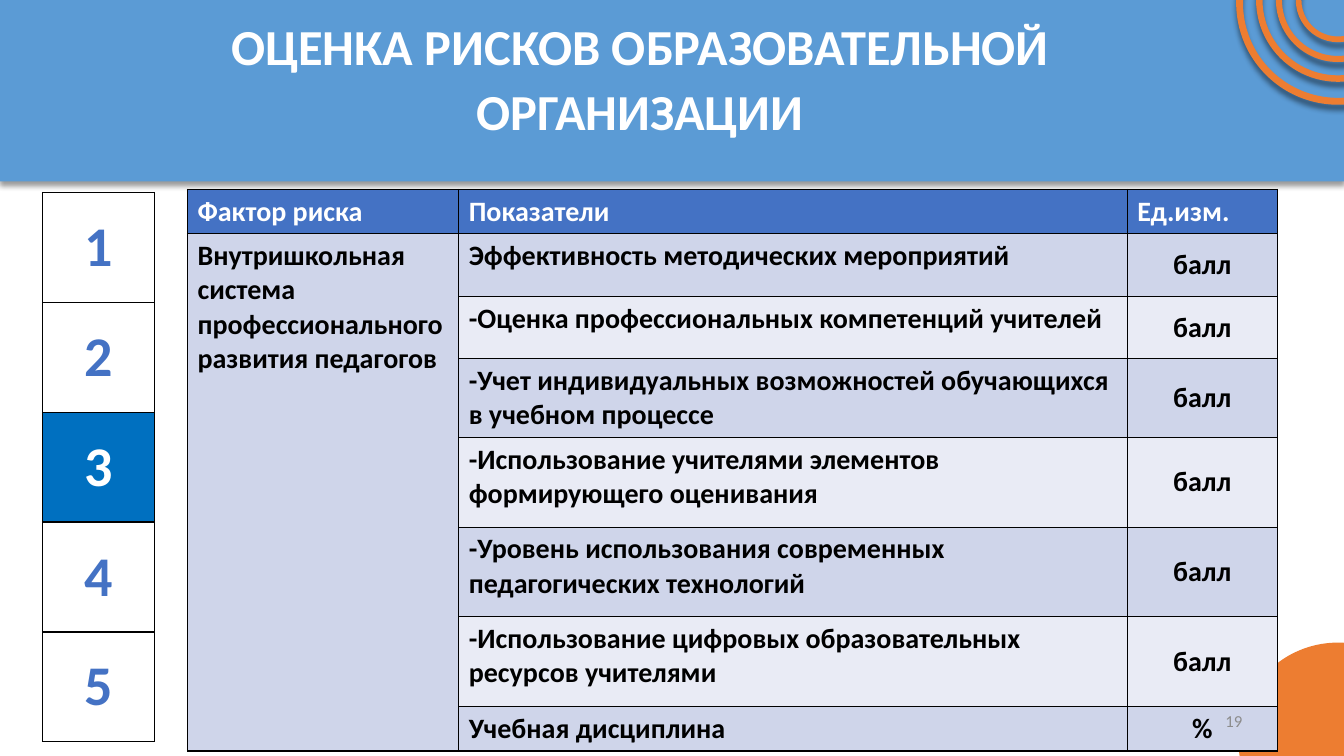
from dataclasses import dataclass

from lxml.etree import SubElement
from pptx import Presentation
from pptx.dml.color import RGBColor
from pptx.enum.shapes import MSO_SHAPE as SHAPE
from pptx.enum.text import MSO_ANCHOR as ANCHOR, MSO_AUTO_SIZE as AUTO, PP_ALIGN as ALIGN
from pptx.oxml import parse_xml
from pptx.oxml.ns import nsdecls, qn
from pptx.util import Inches, Pt

TITLE = "ОЦЕНКА РИСКОВ ОБРАЗОВАТЕЛЬНОЙ ОРГАНИЗАЦИИ"
HEADERS = ["Фактор риска", "Показатели", "Ед.изм."]
FACTOR = "Внутришкольная система профессионального развития педагогов"
INDICATORS = [
    ("Эффективность методических мероприятий", "балл", 0.62),
    ("-Оценка профессиональных компетенций учителей", "балл", 0.62),
    ("-Учет индивидуальных возможностей обучающихся в учебном процессе", "балл", 0.75),
    ("-Использование учителями элементов формирующего оценивания", "балл", 0.89),
    ("-Уровень использования современных педагогических технологий", "балл", 0.89),
    ("-Использование цифровых образовательных ресурсов учителями", "балл", 0.89),
    ("Учебная дисциплина", "%", 0.41),
]
STEPS = ["1", "2", "3", "4", "5"]
CURRENT_STEP = "3"
PAGE = "19"

W, H = 13.33, 7.5
BAND_H = 0.24 * H
DISC = 1.97
DISC_X = 13.27
RING_OFFSETS = [0.03, 0, 0, 0]
FACTOR_COLS = [2.69, 6.63, 1.49]
HEADER_H = 0.41
STEP_W, STEP_H = 1.11, 1.09


@dataclass(frozen=True)
class Theme:
    font: str = "Calibri"
    band: str = "5B9BD5"
    accent: str = "ED7D31"
    header: str = "4472C4"
    stripes: tuple = ("CFD5EA", "E9EBF5")
    current: str = "0070C0"
    white: str = "FFFFFF"
    black: str = "000000"
    page: str = "8C8C8C"
    title_size: int = 36
    table_size: int = 20
    step_size: int = 40
    page_size: int = 12


T = Theme()


def rgb(value):
    return RGBColor.from_string(value)


def add_shadow(sp, alpha, blur, dist):
    effects = sp.element.spPr.find(qn("a:effectLst"))
    shadow = SubElement(effects, qn("a:outerShdw"), blurRad=str(Pt(blur)),
                        dist=str(Pt(dist)), dir="5400000", rotWithShape="0")
    color = SubElement(shadow, qn("a:srgbClr"), val=T.black)
    SubElement(color, qn("a:alpha"), val=str(alpha * 1000))


def add_figure(s, kind, x, y, w, h, fill):
    sp = s.shapes.add_shape(kind, Inches(x), Inches(y), Inches(w), Inches(h))
    sp.shadow.inherit = False
    sp.fill.solid()
    sp.fill.fore_color.rgb = rgb(fill)
    sp.line.fill.background()
    return sp


def add_disc(s, kind, cy, size):
    return add_figure(s, kind, DISC_X - size / 2, cy - size / 2, size, size, T.accent)


def write(tf, text, size, color, bold=True, align=ALIGN.LEFT):
    p = tf.paragraphs[0]
    p.alignment = align
    r = p.add_run()
    r.text = text
    r.font.name, r.font.size, r.font.bold = T.font, Pt(size), bold
    r.font.color.rgb = rgb(color)
    return p


def paint(cell, fill):
    cell.fill.solid()
    cell.fill.fore_color.rgb = rgb(fill)
    tc_pr = cell._tc.get_or_add_tcPr()
    for i, side in enumerate(("lnL", "lnR", "lnT", "lnB")):
        tc_pr.insert(i, parse_xml(
            f'<a:{side} {nsdecls("a")} w="{Pt(1)}"><a:solidFill>'
            f'<a:srgbClr val="{T.black}"/></a:solidFill></a:{side}>'))


def add_grid(s, x, y, cols, rows):
    frame = s.shapes.add_table(len(rows), len(cols), Inches(x), Inches(y),
                               Inches(sum(cols)), Inches(sum(rows)))
    table = frame.table
    table.first_row = table.horz_banding = False
    for col, width in zip(table.columns, cols):
        col.width = Inches(width)
    for row, height in zip(table.rows, rows):
        row.height = Inches(height)
    return table


def add_decor(s):
    band = add_figure(s, SHAPE.RECTANGLE, 0, 0, W, BAND_H, T.band)
    add_shadow(band, 40, 4, 3)
    add_disc(s, SHAPE.OVAL, 7.36, DISC)
    for i, cy in enumerate(RING_OFFSETS):
        ring = add_disc(s, SHAPE.DONUT, cy, DISC * (1 - i / 5))
        ring.adjustments[0] = 0.01
        ring.line.color.rgb = rgb(T.accent)
        ring.line.width = Pt(3.5)
        add_shadow(ring, 43, 4, 4)


def add_title(s):
    title = s.shapes.title
    title.left, title.top = Inches(0.6), Inches(0.14)
    title.width, title.height = Inches(11.5), Inches(1.22)
    tf = title.text_frame
    tf.word_wrap, tf.auto_size = True, AUTO.NONE
    tf.vertical_anchor = ANCHOR.MIDDLE
    p = write(tf, TITLE, T.title_size, T.white, align=ALIGN.CENTER)
    p.line_spacing, p.space_before, p.space_after = 1.07, Pt(0), Pt(8)
    title.element.getparent().append(title.element)


def add_factors(s):
    heights = [HEADER_H] + [height for _, _, height in INDICATORS]
    table = add_grid(s, 1.86, 1.88, FACTOR_COLS, heights)
    for c, text in enumerate(HEADERS):
        cell = table.cell(0, c)
        paint(cell, T.header)
        write(cell.text_frame, text, T.table_size, T.white)
    factor = table.cell(1, 0)
    factor.merge(table.cell(len(INDICATORS), 0))
    write(factor.text_frame, FACTOR, T.table_size, T.black)
    for i, (indicator, unit, _) in enumerate(INDICATORS):
        name, measure = table.cell(i + 1, 1), table.cell(i + 1, 2)
        paint(table.cell(i + 1, 0), T.stripes[0])
        for cell in (name, measure):
            paint(cell, T.stripes[i % 2])
        write(name.text_frame, indicator, T.table_size, T.black)
        write(measure.text_frame, unit, T.table_size, T.black, align=ALIGN.CENTER)
        measure.vertical_anchor = ANCHOR.MIDDLE


def add_steps(s):
    table = add_grid(s, 0.42, 1.91, [STEP_W], [STEP_H] * len(STEPS))
    for i, step in enumerate(STEPS):
        active = step == CURRENT_STEP
        cell = table.cell(i, 0)
        paint(cell, T.current if active else T.white)
        cell.vertical_anchor = ANCHOR.MIDDLE
        write(cell.text_frame, step, T.step_size,
              T.white if active else T.header, align=ALIGN.CENTER)


def add_page(s):
    box = s.shapes.add_textbox(Inches(9.42), Inches(6.95), Inches(3), Inches(0.4))
    tf = box.text_frame
    tf.word_wrap = True
    tf.vertical_anchor = ANCHOR.MIDDLE
    write(tf, PAGE, T.page_size, T.page, bold=False, align=ALIGN.RIGHT)


def main():
    prs = Presentation()
    prs.slide_width, prs.slide_height = Inches(W), Inches(H)
    s = prs.slides.add_slide(prs.slide_layouts[5])
    for build in (add_decor, add_title, add_factors, add_steps, add_page):
        build(s)
    prs.save("out.pptx")


if __name__ == "__main__":
    main()
